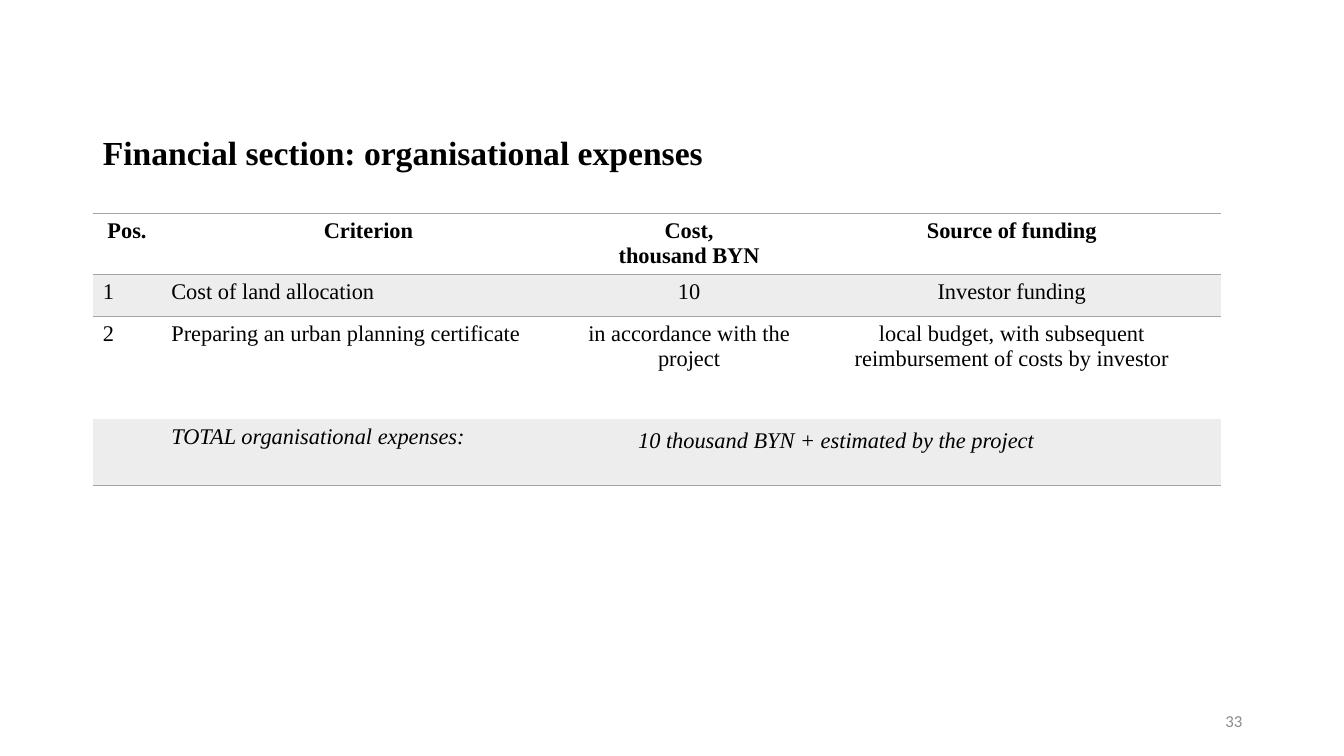
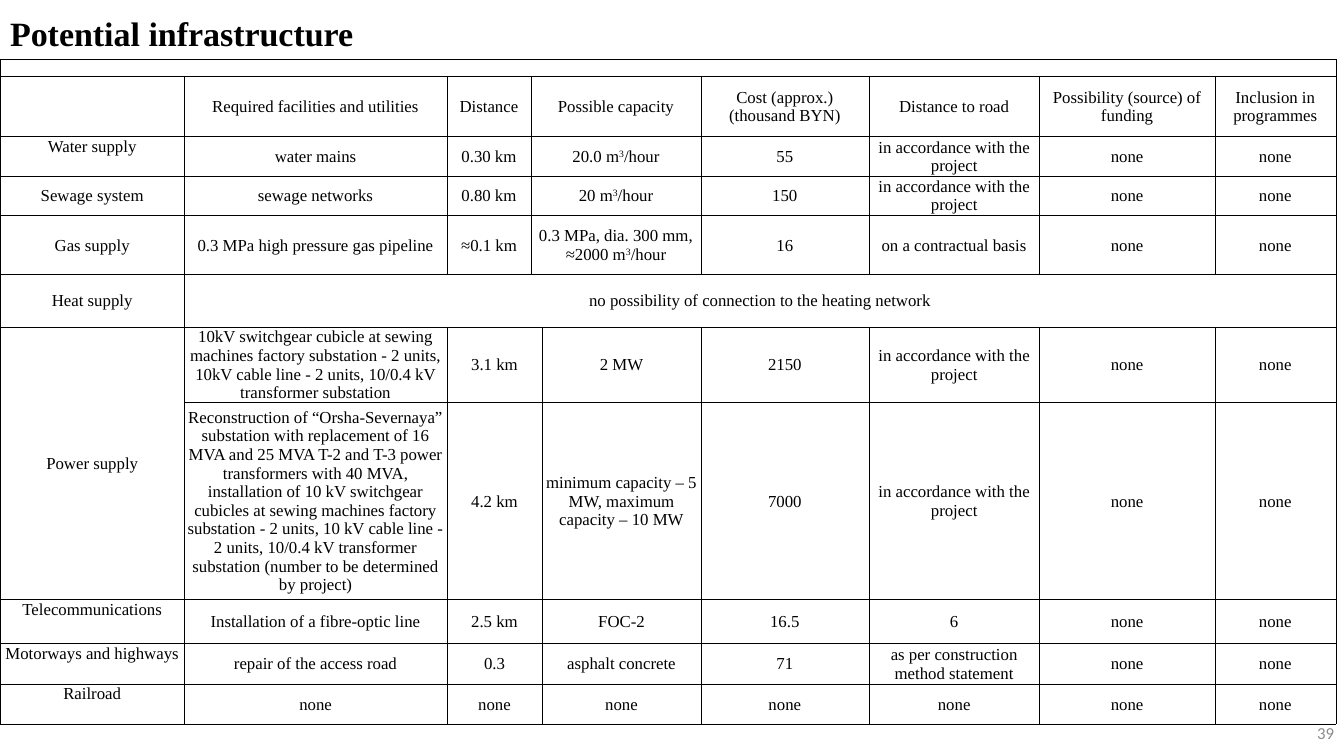
from lxml.etree import SubElement
from pptx import Presentation
from pptx.dml.color import RGBColor
from pptx.enum.text import MSO_ANCHOR, PP_ALIGN
from pptx.oxml.ns import qn
from pptx.util import Inches, Pt

WIDE, HIGH = 13.33, 7.5
SERIF, SANS = "Times New Roman", "Calibri"
BLACK, GREY, BAND, MUTED = "000000", "A5A5A5", "EDEDED", "8C8C8C"
LEFT, MID, RIGHT = PP_ALIGN.LEFT, PP_ALIGN.CENTER, PP_ALIGN.RIGHT
PLAIN = "{2D5ABB26-0587-4C30-8999-92F81FD0307C}"  # no style, no grid

PROJECT = "in accordance with the project"
COSTS = [
    ["Pos.", "Criterion", "Cost,\nthousand BYN", "Source of funding"],
    ["1", "Cost of land allocation", "10", "Investor funding"],
    ["2", "Preparing an urban planning certificate", PROJECT,
     "local budget, with subsequent reimbursement of costs by investor"],
    ["", "", "", ""],
    ["", "TOTAL organisational expenses:",
     "10 thousand BYN + estimated by the project", None],
]

# None continues the cell on its left; ^ switches superscript on and off
NONE = ["none", "none"]
POWER = 6
NEEDS = [
    [""] + [None] * 8,
    ["", "Required facilities and utilities", "Distance", "Possible capacity",
     None, "Cost (approx.) (thousand BYN)", "Distance to road",
     "Possibility (source) of funding", "Inclusion in programmes"],
    ["Water supply", "water mains", "0.30 km", "20.0 m^3^/hour", None, "55",
     PROJECT, *NONE],
    ["Sewage system", "sewage networks", "0.80 km", "20 m^3^/hour", None,
     "150", PROJECT, *NONE],
    ["Gas supply", "0.3 MPa high pressure gas pipeline", "≈0.1 km",
     "0.3 MPa, dia. 300 mm, ≈2000 m^3^/hour", None, "16",
     "on a contractual basis", *NONE],
    ["Heat supply", "no possibility of connection to the heating network"]
    + [None] * 7,
    ["Power supply",
     "10kV switchgear cubicle at sewing machines factory substation - "
     "2 units, 10kV cable line - 2 units, 10/0.4 kV transformer substation",
     "3.1 km", None, "2 MW", "2150", PROJECT, *NONE],
    ["",
     "Reconstruction of “Orsha-Severnaya” substation with replacement of "
     "16 MVA and 25 MVA T-2 and T-3 power transformers with 40 MVA, "
     "installation of 10 kV switchgear cubicles at sewing machines factory "
     "substation - 2 units, 10 kV cable line - 2 units, 10/0.4 kV "
     "transformer substation (number to be determined by project)",
     "4.2 km", None, "minimum capacity – 5 MW, maximum capacity – 10 MW",
     "7000", PROJECT, *NONE],
    ["Telecommunications", "Installation of a fibre-optic line", "2.5 km",
     None, "FOC-2", "16.5", "6", *NONE],
    ["Motorways and highways", "repair of the access road", "0.3", None,
     "asphalt concrete", "71", "as per construction method statement", *NONE],
    ["Railroad", "none", "none", None, "none", "none", "none", *NONE],
]
RAISED = ("Water supply", "Telecommunications", "Motorways and highways",
          "Railroad")


def color(code):
    return RGBColor.from_string(code)


def place(x, y, w, h):
    """Turn percentages of the slide into lengths."""
    return [Inches(part * side / 100)
            for part, side in zip((x, y, w, h), (WIDE, HIGH) * 2)]


def write(frame, text, size=12, font=SERIF, tint=BLACK, bold=False,
          italic=False, align=LEFT, space=None):
    for i, line in enumerate(text.split("\n")):
        para = frame.add_paragraph() if i else frame.paragraphs[0]
        para.alignment = align
        para.line_spacing = space
        if not line:
            end = para._p.get_or_add_endParaRPr()
            end.set("sz", str(int(size * 100)))
            continue
        for j, piece in enumerate(line.split("^")):
            run = para.add_run()
            run.text = piece
            face = run.font
            face.name, face.size = font, Pt(size)
            face.bold, face.italic = bold, italic
            face.color.rgb = color(tint)
            if j % 2:
                face._element.set("baseline", "30000")


def edge(cell, sides, tint, width):
    """Draw the named sides (L, R, T, B); call before the cell is filled."""
    props = cell._tc.get_or_add_tcPr()
    for side in "LRTB":
        if side in sides:
            line = SubElement(props, qn("a:ln" + side), w=str(Pt(width)))
            fill = SubElement(line, qn("a:solidFill"))
            SubElement(fill, qn("a:srgbClr"), val=tint)


def head(slide, text, area, size):
    title = slide.shapes.title
    title.left, title.top, title.width, title.height = place(*area)
    frame = title.text_frame
    frame.word_wrap = True
    frame.vertical_anchor = MSO_ANCHOR.MIDDLE
    write(frame, text, size=size, bold=True, space=0.9)


def number(slide, text, x, y):
    frame = slide.shapes.add_textbox(*place(x, y, 22.5, 5.33)).text_frame
    frame.word_wrap = True
    frame.vertical_anchor = MSO_ANCHOR.MIDDLE
    write(frame, text, font=SANS, tint=MUTED, align=RIGHT)


def grid(slide, data, x, y, cols, rows):
    """Add an unstyled table and join the cells that None continues."""
    left, top, _, _ = place(x, y, 0, 0)
    table = slide.shapes.add_table(len(rows), len(cols), left, top,
                                   Inches(sum(cols)), Inches(sum(rows))).table
    table._tbl.tblPr[0].text = PLAIN
    table.first_row = table.horz_banding = False
    for col, width in zip(table.columns, cols):
        col.width = Inches(width)
    for row, height in zip(table.rows, rows):
        row.height = Inches(height)
    for r, line in enumerate(data):
        c = 0
        while c < len(line):
            last = c
            while last + 1 < len(line) and line[last + 1] is None:
                last += 1
            if last > c:
                table.cell(r, c).merge(table.cell(r, last))
            c = last + 1
    return table


def cells(table, data):
    for r, line in enumerate(data):
        for c, text in enumerate(line):
            yield r, c, table.cell(r, c), text or ""


def costs(slide):
    head(slide, "Financial section: organisational expenses",
         (6.9, 14.8, 86.3, 11.2), 24)
    table = grid(slide, COSTS, 6.9, 28.27, [0.68, 4.11, 2.25, 4.15],
                 [0.6, 0.42, 0.6, 0.42, 0.66])
    total = len(COSTS) - 1
    sides = {0: "TB", 1: "T", total: "B"}
    for r, c, cell, text in cells(table, COSTS):
        edge(cell, sides.get(r, ""), GREY, 1)
        if r in (1, total):
            cell.fill.solid()
            cell.fill.fore_color.rgb = color(BAND)
        else:
            cell.fill.background()
        mid = r == 0 or (c > 1 and r != total)
        write(cell.text_frame, text, size=16, bold=r == 0,
              italic=r == total, align=MID if mid else LEFT)
    amount = table.cell(total, 2)
    amount.margin_left, amount.margin_top = Inches(0.62), Inches(0.09)
    number(slide, "33", 70.67, 92.67)


def needs(slide):
    head(slide, "Potential infrastructure", (0, 1.4, 90.4, 6.6), 24.3)
    table = grid(slide, NEEDS, 0, 7.8,
                 [1.83, 2.6, 0.84, 0.11, 1.57, 1.67, 1.69, 1.74, 1.2],
                 [0.17, 0.6, 0.39, 0.39, 0.59, 0.52, 0.75, 1.95, 0.44, 0.4,
                  0.4])
    table.cell(POWER, 0).merge(table.cell(POWER + 1, 0))
    for r, c, cell, text in cells(table, NEEDS):
        edge(cell, "LRTB", BLACK, 0.25)
        cell.fill.background()
        cell.margin_left = cell.margin_right = cell.margin_top = Inches(0.01)
        cell.margin_bottom = 0
        top = text in RAISED
        cell.vertical_anchor = MSO_ANCHOR.TOP if top else MSO_ANCHOR.MIDDLE
        write(cell.text_frame, text, size=12 if r else 8, align=MID)
    number(slide, "39", 77.5, 94.27)


def main():
    deck = Presentation()
    deck.slide_width, deck.slide_height = Inches(WIDE), Inches(HIGH)
    for build in (costs, needs):
        build(deck.slides.add_slide(deck.slide_layouts[5]))
    deck.save("out.pptx")


if __name__ == "__main__":
    main()
